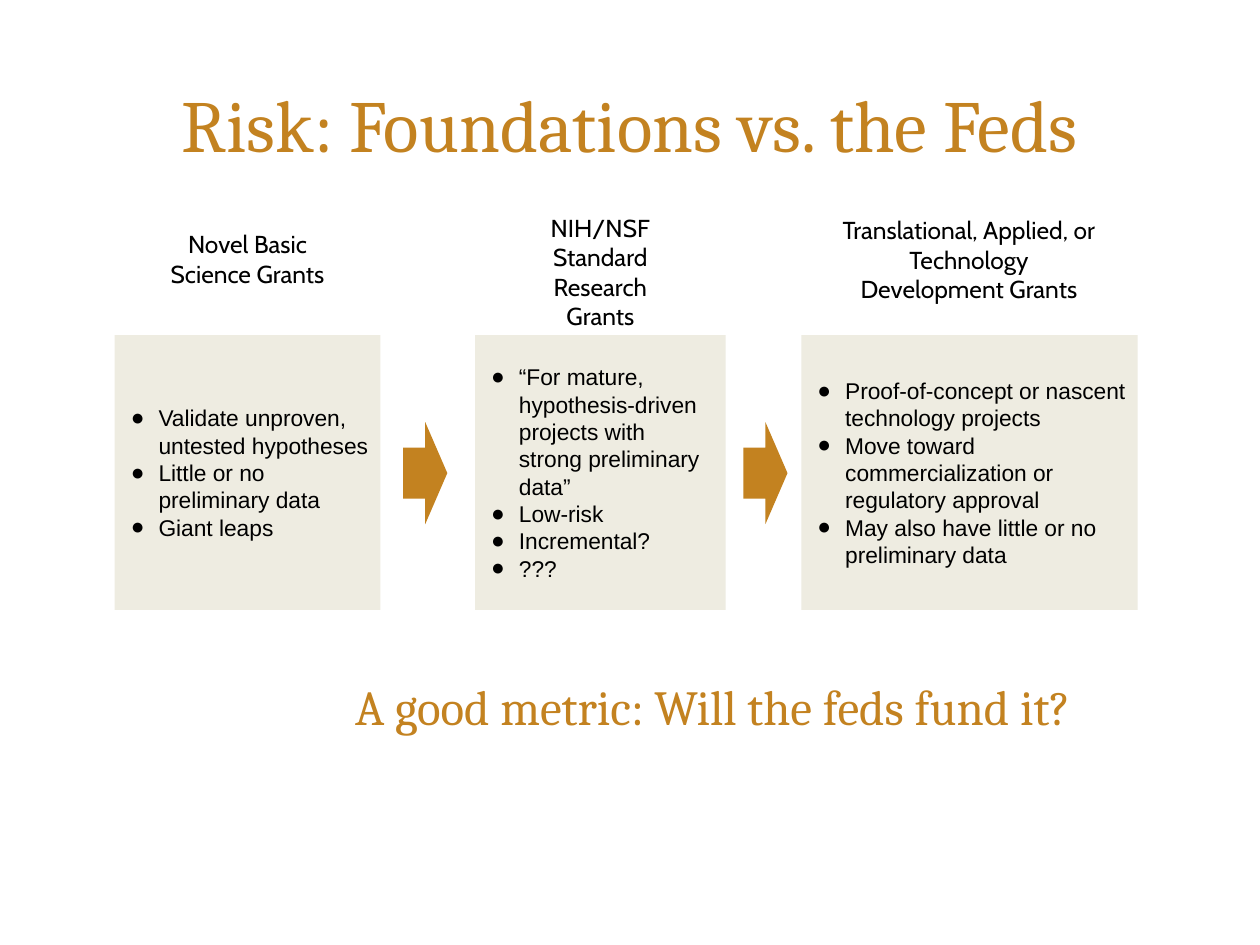
from lxml import etree
from pptx import Presentation
from pptx.dml.color import RGBColor
from pptx.enum import shapes, text
from pptx.oxml import ns
from pptx.util import Inches, Pt

GOLD = RGBColor(0xC3, 0x82, 0x20)
SAND = RGBColor(0xEE, 0xEC, 0xE1)
BLACK = RGBColor(0, 0, 0)

STAGES = [
    (0.91, 2.11, ["Validate unproven, untested hypotheses",
                  "Little or no preliminary data",
                  "Giant leaps"]),
    (3.77, 1.99, ["“For mature, hypothesis-driven projects with strong preliminary data”",
                  "Low-risk", "Incremental?", "???"]),
    (6.36, 2.67, ["Proof-of-concept or nascent technology projects",
                  "Move toward commercialization or regulatory approval",
                  "May also have little or no preliminary data"]),
]
HEADS = [
    (1.21, 1.72, 1.51, 0.91, ["Novel Basic Science Grants"]),
    (4.01, 1.59, 1.51, 1.14, ["NIH/NSF", "Standard Research Grants"]),
    (6.53, 1.61, 2.32, 0.91, ["Translational, Applied, or Technology Development Grants"]),
]
ARROWS = [3.2, 5.9]


def place(left, top, width, height):
    return [Inches(n) for n in (left, top, width, height)]


def pad(frame, edge):
    frame.word_wrap = True
    frame.margin_left = frame.margin_right = Inches(0.1)
    frame.margin_top = frame.margin_bottom = Inches(edge)


def bullet(para):
    props = para._p.get_or_add_pPr()
    props.set("marL", str(Inches(0.25)))
    props.set("indent", str(-Inches(0.22)))
    tint = etree.SubElement(props, ns.qn("a:buClr"))
    etree.SubElement(tint, ns.qn("a:srgbClr"), val=str(BLACK))
    etree.SubElement(props, ns.qn("a:buFont"), typeface="Arial")
    etree.SubElement(props, ns.qn("a:buChar"), char="●")


def write(frame, lines, font, size, color, align, dots=False):
    for i, line in enumerate(lines):
        para = frame.paragraphs[0] if i == 0 else frame.add_paragraph()
        para.alignment = align
        if dots:
            bullet(para)
        run = para.add_run()
        run.text = line
        run.font.name = font
        run.font.size = Pt(size)
        run.font.color.rgb = color


def add_solid(slide, kind, spot, color):
    shape = slide.shapes.add_shape(kind, *place(*spot))
    shape.shadow.inherit = False
    shape.fill.solid()
    shape.fill.fore_color.rgb = color
    shape.line.fill.background()
    return shape


def add_title(slide, line):
    title = slide.shapes.title
    title.left, title.top, title.width, title.height = place(0.75, 0.35, 8.49, 1.26)
    frame = title.text_frame
    pad(frame, 0.05)
    frame.vertical_anchor = text.MSO_ANCHOR.MIDDLE
    write(frame, [line], "Cambria", 42, GOLD, text.PP_ALIGN.CENTER)


def add_stage(slide, left, width, lines):
    spot = (left, 2.66, width, 2.18)
    frame = add_solid(slide, shapes.MSO_SHAPE.RECTANGLE, spot, SAND).text_frame
    pad(frame, 0.1)
    frame.vertical_anchor = text.MSO_ANCHOR.MIDDLE
    write(frame, lines, "Arial", 13, BLACK, text.PP_ALIGN.LEFT, dots=True)


def add_label(slide, spot, lines, edge, font, size, color, align):
    frame = slide.shapes.add_textbox(*place(*spot)).text_frame
    pad(frame, edge)
    write(frame, lines, font, size, color, align)


def main():
    deck = Presentation()
    deck.slide_width, deck.slide_height = Inches(10), Inches(7.5)
    slide = deck.slides.add_slide(deck.slide_layouts[5])
    add_title(slide, "Risk: Foundations vs. the Feds")
    for stage in STAGES:
        add_stage(slide, *stage)
    for *spot, lines in HEADS:
        add_label(slide, spot, lines, 0.1, "Cabin", 14, BLACK, text.PP_ALIGN.CENTER)
    for left in ARROWS:
        add_solid(slide, shapes.MSO_SHAPE.RIGHT_ARROW, (left, 3.35, 0.35, 0.81), GOLD)
    add_label(slide, (2.72, 5.32, 6.52, 0.57), ["A good metric: Will the feds fund it?"],
              0.05, "Cambria", 28, GOLD, text.PP_ALIGN.LEFT)
    deck.save("out.pptx")


if __name__ == "__main__":
    main()
